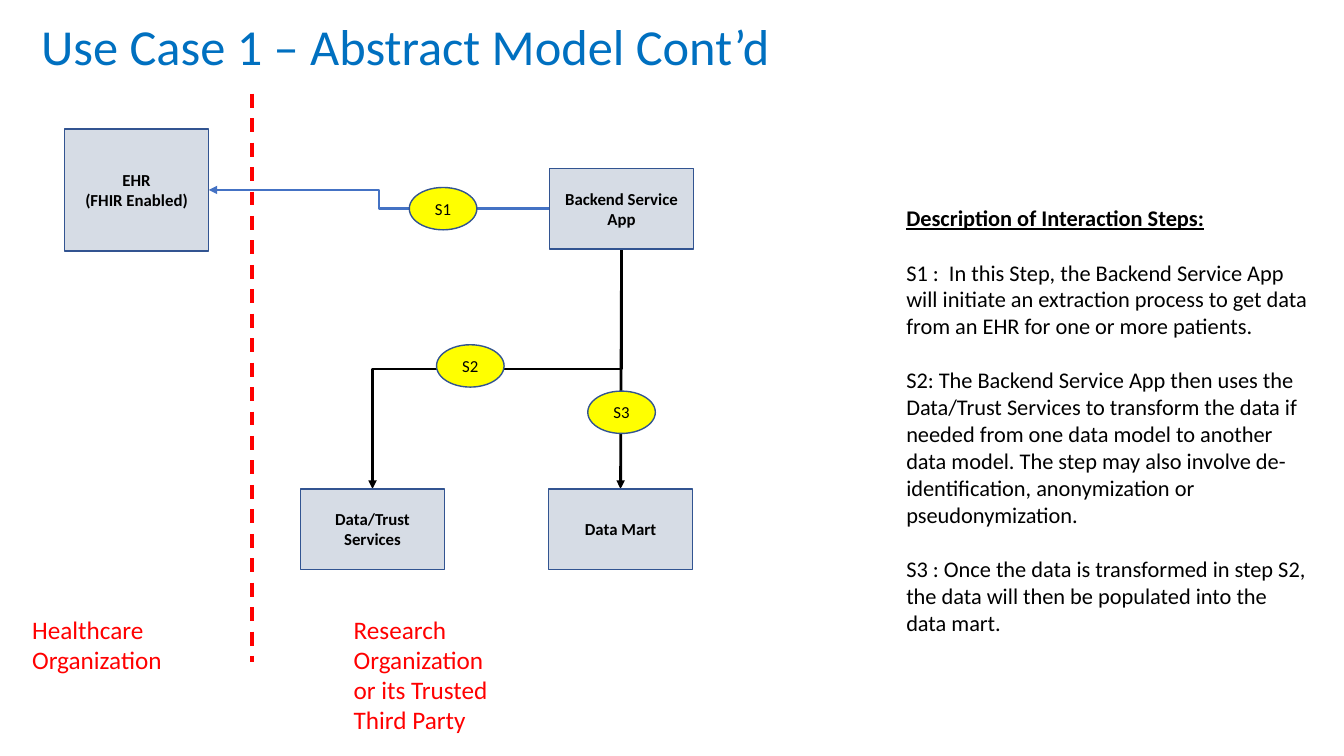
from lxml import etree
from pptx import Presentation
from pptx import util as u
from pptx.dml.color import RGBColor
from pptx.enum import dml, shapes, text
from pptx.oxml import ns

Inches, Pt = u.Inches, u.Pt

FONT = "Calibri"
BLACK = RGBColor(0x00, 0x00, 0x00)
RED = RGBColor(0xFF, 0x00, 0x00)
YELLOW = RGBColor(0xFF, 0xFF, 0x00)
TITLE_BLUE = RGBColor(0x00, 0x70, 0xC0)
ARROW_BLUE = RGBColor(0x44, 0x72, 0xC4)
BOX_FILL = RGBColor(0xD6, 0xDC, 0xE5)
OUTLINE = RGBColor(0x32, 0x54, 0x91)

TITLE = "Use Case 1 – Abstract Model Cont’d"
BOX_WIDTH, BOX_HEIGHT = 1.43, 0.8
STEP_SIZE = (0.67, 0.42)

# name: (lines, left, top, height)
SYSTEMS = {
    "ehr": (["EHR", "(FHIR Enabled)"], 0.64, 1.28, 1.21),
    "backend": (["Backend Service", "App"], 5.45, 1.67, BOX_HEIGHT),
    "trust": (["Data/Trust Services"], 2.98, 4.85, BOX_HEIGHT),
    "mart": (["Data Mart"], 5.44, 4.85, BOX_HEIGHT),
}
STEPS = [("S1", 4.06, 1.86), ("S2", 4.33, 3.42), ("S3", 5.83, 3.88)]
# text, left, top, width, height
ORGANIZATIONS = [
    ("Healthcare Organization", 0.22, 6.04, 1.71, 0.71),
    ("Research Organization or its Trusted Third Party", 3.41, 6.04, 1.71, 1.31),
]
HEADING = "Description of Interaction Steps:"
DESCRIPTIONS = [
    "S1 :  In this Step, the Backend Service App will initiate an extraction "
    "process to get data from an EHR for one or more patients.",
    "S2: The Backend Service App then uses the Data/Trust Services to transform "
    "the data if needed from one data model to another data model. The step may "
    "also involve de-identification, anonymization or pseudonymization.",
    "S3 : Once the data is transformed in step S2, the data will then be "
    "populated into the data mart.",
]


def add_run(paragraph, words, size, color=BLACK, bold=False, underline=False):
    run = paragraph.add_run()
    run.text = words
    font = run.font
    font.name, font.size, font.bold, font.underline = FONT, Pt(size), bold, underline
    font.color.rgb = color


def next_paragraph(frame, index):
    return frame.add_paragraph() if index else frame.paragraphs[0]


def add_text_box(slide, left, top, width, height):
    box = slide.shapes.add_textbox(*map(Inches, (left, top, width, height)))
    box.text_frame.word_wrap = True
    return box.text_frame


def add_node(slide, kind, lines, place, fill, bold):
    """Add an outlined shape with centred lines of text."""
    shape = slide.shapes.add_shape(kind, *map(Inches, place))
    shape.shadow.inherit = False
    shape.fill.solid()
    shape.fill.fore_color.rgb = fill
    shape.line.color.rgb = OUTLINE
    shape.line.width = Pt(1)
    frame = shape.text_frame
    frame.word_wrap = True
    frame.vertical_anchor = text.MSO_ANCHOR.MIDDLE
    for index, line in enumerate(lines):
        paragraph = next_paragraph(frame, index)
        paragraph.alignment = text.PP_ALIGN.CENTER
        add_run(paragraph, line, 12, bold=bold)


def add_line(slide, kind, start, end, color, width, arrow=True):
    connector = slide.shapes.add_connector(kind, *map(Inches, (*start, *end)))
    connector.line.color.rgb = color
    connector.line.width = Pt(width)
    if arrow:
        line = connector.line._get_or_add_ln()
        etree.SubElement(line, ns.qn("a:tailEnd"), type="triangle")
    etree.SubElement(connector._element.spPr, ns.qn("a:effectLst"))
    return connector


def add_vertical_elbow(slide, start, end, color, width):
    """Add an elbow leaving downwards to the left: a quarter-turned elbow."""
    center_x, center_y = (start[0] + end[0]) / 2, (start[1] + end[1]) / 2
    half_run, half_rise = (end[1] - start[1]) / 2, (start[0] - end[0]) / 2
    connector = add_line(slide, shapes.MSO_CONNECTOR.ELBOW,
                         (center_x - half_run, center_y - half_rise),
                         (center_x + half_run, center_y + half_rise), color, width)
    connector._element.spPr.find(ns.qn("a:xfrm")).set("rot", "5400000")


def edge(name, side):
    """Return the middle of a system box's side."""
    _, left, top, height = SYSTEMS[name]
    across, down = {"left": (0, 0.5), "right": (1, 0.5),
                    "top": (0.5, 0), "bottom": (0.5, 1)}[side]
    return left + across * BOX_WIDTH, top + down * height


def main():
    presentation = Presentation()
    presentation.slide_width, presentation.slide_height = Inches(13.33), Inches(7.5)
    slide = presentation.slides.add_slide(presentation.slide_layouts[6])

    backend_bottom = edge("backend", "bottom")
    add_vertical_elbow(slide, backend_bottom, edge("trust", "top"), BLACK, 2)
    add_line(slide, shapes.MSO_CONNECTOR.STRAIGHT, backend_bottom,
             edge("mart", "top"), BLACK, 2)
    add_line(slide, shapes.MSO_CONNECTOR.ELBOW, edge("backend", "left"),
             edge("ehr", "right"), ARROW_BLUE, 2)
    boundary = add_line(slide, shapes.MSO_CONNECTOR.STRAIGHT, (2.5, 0.93),
                        (2.5, 6.57), RED, 2.5, arrow=False)
    boundary.line.dash_style = dml.MSO_LINE.DASH

    for lines, left, top, height in SYSTEMS.values():
        add_node(slide, shapes.MSO_SHAPE.RECTANGLE, lines,
                 (left, top, BOX_WIDTH, height), BOX_FILL, True)
    for label, left, top in STEPS:
        add_node(slide, shapes.MSO_SHAPE.OVAL, [label],
                 (left, top, *STEP_SIZE), YELLOW, False)

    for words, *place in ORGANIZATIONS:
        add_run(add_text_box(slide, *place).paragraphs[0], words, 18, RED)

    frame = add_text_box(slide, 8.89, 1.98, 4.19, 4.68)
    for index, words in enumerate([HEADING, *DESCRIPTIONS]):
        paragraph = next_paragraph(frame, index)
        paragraph.space_before = Pt(19.5 if index else 0)
        is_heading = index == 0
        add_run(paragraph, words, 16, bold=is_heading, underline=is_heading)

    frame = add_text_box(slide, 0.31, 0.06, 11.5, 0.85)
    frame.vertical_anchor = text.MSO_ANCHOR.MIDDLE
    frame.paragraphs[0].line_spacing = 0.9
    add_run(frame.paragraphs[0], TITLE, 36, TITLE_BLUE)

    presentation.save("out.pptx")


if __name__ == "__main__":
    main()
